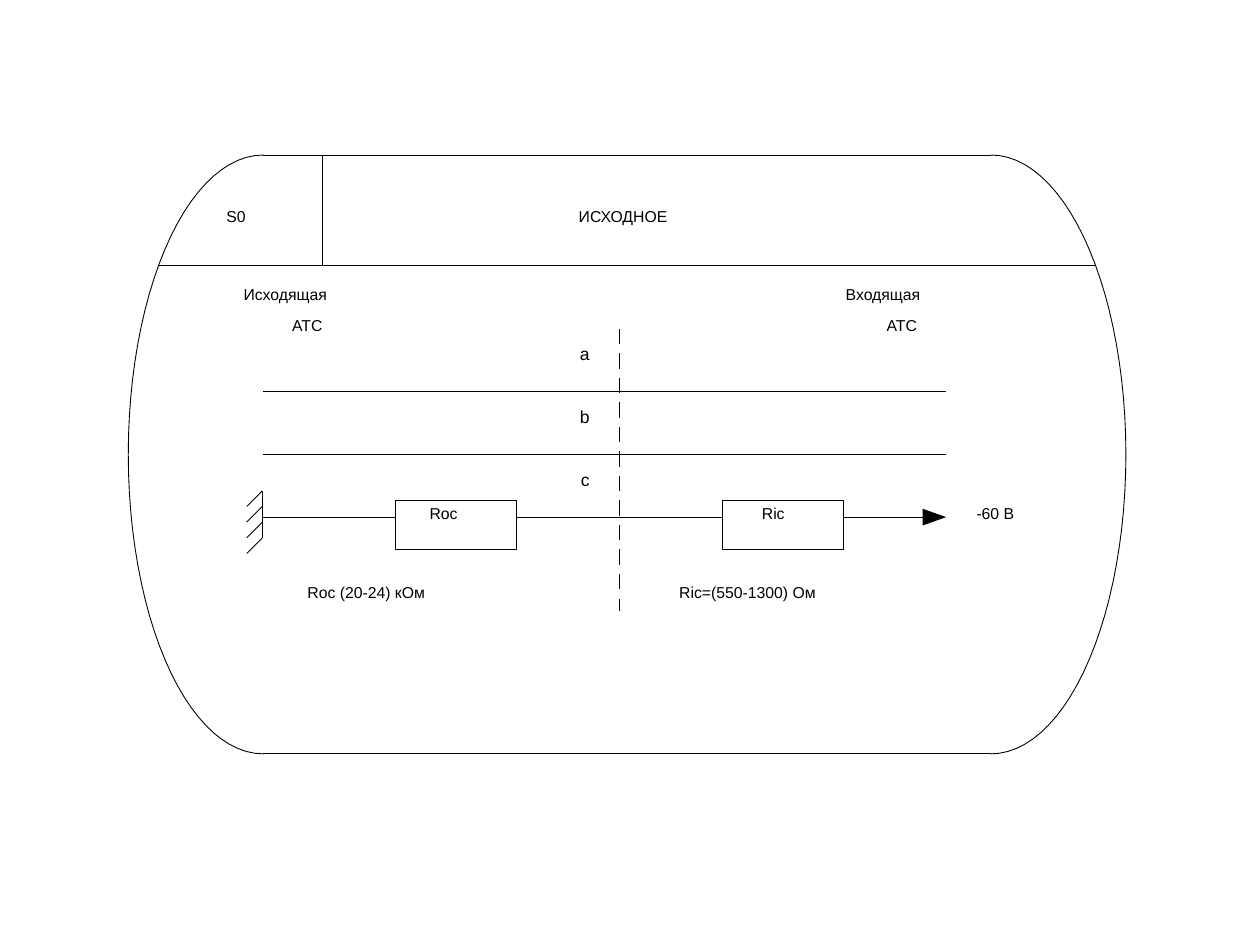
from math import cos, pi, sin

from lxml.etree import SubElement
from pptx import Presentation
from pptx.dml.color import RGBColor
from pptx.enum.shapes import MSO_CONNECTOR, MSO_SHAPE
from pptx.enum.text import MSO_AUTO_SIZE
from pptx.oxml.ns import qn
from pptx.util import Pt

BLACK = RGBColor(0, 0, 0)
WHITE = RGBColor(255, 255, 255)
FONT = "Arial"
LINE_WIDTH = 0.5

# text, left, top, width, font size
HEADINGS = [
    ("S0", 129.4, 118.1, 13, 9),
    ("ИСХОДНОЕ", 330.7, 118.1, 54, 9),
    ("Исходящая", 139.2, 162.7, 50, 9),
    ("АТС", 167, 180.4, 20, 9),
    ("Входящая", 483.3, 162.7, 45, 9),
    ("АТС", 506.7, 180.4, 20, 9),
]
WIRE_LABELS = [
    ("а", 331.4, 195.8, 7, 10),
    ("b", 331.4, 231.8, 7, 10),
    ("c", 331.9, 267.8, 7, 10),
]
CIRCUIT_LABELS = [
    ("Roc", 245.5, 288, 19, 9),
    ("Ric", 435.4, 288, 16, 9),
    ("Roc (20-24) кОм", 175.7, 333.1, 71, 9),
    ("Ric=(550-1300) Ом", 388.1, 333.1, 82, 9),
    ("-60 В", 558, 288, 24, 9),
]

# The frame: straight top and bottom, half an ellipse at each side
LEFT_CENTRE, RIGHT_CENTRE, MIDDLE = 150.5, 566.2, 259.7
RADIUS_X, RADIUS_Y = 77.2, 171.1
TOP, BOTTOM = MIDDLE - RADIUS_Y, MIDDLE + RADIUS_Y
ARC_STEPS = 25
HEADER_BOTTOM = 151.9
FRAME_LINES = [
    (LEFT_CENTRE, TOP, RIGHT_CENTRE, TOP),
    (LEFT_CENTRE, BOTTOM, RIGHT_CENTRE, BOTTOM),
    (90.7, HEADER_BOTTOM, 625.8, HEADER_BOTTOM),
    (184.4, HEADER_BOTTOM, 184.4, TOP),
]

WIRE_LEFT, WIRE_RIGHT, ARROW_LEFT = 150.5, 540.7, 527.2
WIRE_A, WIRE_B, WIRE_C = 223.9, 259.8, 295.5
ARROW_HALF = 4.8
RESISTOR_LEFTS, RESISTOR_TOP = (226, 412.7), 286
RESISTOR_WIDTH, RESISTOR_HEIGHT = 69.2, 28

DIVIDER_X, DIVIDER_TOP, DIVIDER_BOTTOM = 354, 188, 349.3
DASH_STEP, DASH_LENGTH, DASH_COUNT = 14, 8.7, 12
GROUND_X, GROUND_TOP, HATCH_STEP, HATCH_SIZE, HATCH_COUNT = 149.8, 280.6, 8.95, 8.8, 4


def add_line(page, x1, y1, x2, y2):
    line = page.shapes.add_connector(MSO_CONNECTOR.STRAIGHT, Pt(x1), Pt(y1), Pt(x2), Pt(y2))
    line.line.color.rgb = BLACK
    line.line.width = Pt(LINE_WIDTH)
    SubElement(line._element.spPr, qn("a:effectLst"))


def add_outline(page, points, close=False):
    start, *rest = [(Pt(x), Pt(y)) for x, y in points]
    builder = page.shapes.build_freeform(*start, scale=1.0)
    builder.add_line_segments(rest, close=close)
    outline = builder.convert_to_shape()
    outline.shadow.inherit = False
    return outline


def add_quarter_arc(page, centre, side, direction):
    """Draw from the frame's outermost point to its top (-1) or bottom (1)."""
    angles = [pi / 2 * step / ARC_STEPS for step in range(ARC_STEPS + 1)]
    arc = add_outline(page, [(centre + side * RADIUS_X * cos(angle),
                              MIDDLE + direction * RADIUS_Y * sin(angle))
                             for angle in angles])
    arc.fill.background()
    arc.line.color.rgb = BLACK
    arc.line.width = Pt(LINE_WIDTH)


def add_label(page, text, left, top, width, size):
    box = page.shapes.add_textbox(Pt(left), Pt(top), Pt(width), Pt(size * 1.2))
    frame = box.text_frame
    frame.margin_left = frame.margin_right = frame.margin_top = frame.margin_bottom = 0
    frame.word_wrap = True
    frame.auto_size = MSO_AUTO_SIZE.SHAPE_TO_FIT_TEXT
    para = frame.paragraphs[0]
    para.text = text
    para.font.name = FONT
    para.font.size = Pt(size)
    para.font.color.rgb = BLACK


def add_resistor(page, left):
    resistor = page.shapes.add_shape(MSO_SHAPE.RECTANGLE, Pt(left), Pt(RESISTOR_TOP),
                                     Pt(RESISTOR_WIDTH), Pt(RESISTOR_HEIGHT))
    resistor.shadow.inherit = False
    resistor.fill.solid()
    resistor.fill.fore_color.rgb = WHITE
    resistor.line.color.rgb = BLACK
    resistor.line.width = Pt(LINE_WIDTH)


def add_arrow_tip(page):
    tip = add_outline(page, [(ARROW_LEFT, WIRE_C - ARROW_HALF), (WIRE_RIGHT, WIRE_C),
                             (ARROW_LEFT, WIRE_C + ARROW_HALF)], close=True)
    tip.fill.solid()
    tip.fill.fore_color.rgb = BLACK
    tip.line.fill.background()


def add_ground(page):
    add_line(page, GROUND_X, GROUND_TOP + 3 * HATCH_STEP, GROUND_X, GROUND_TOP)
    for index in range(HATCH_COUNT):
        y = GROUND_TOP + index * HATCH_STEP
        add_line(page, GROUND_X, y, GROUND_X - HATCH_SIZE, y + HATCH_SIZE)


def main():
    deck = Presentation()
    deck.slide_width, deck.slide_height = Pt(720), Pt(540)
    page = deck.slides.add_slide(deck.slide_layouts[6])

    for centre, side in ((LEFT_CENTRE, -1), (RIGHT_CENTRE, 1)):
        for direction in (-1, 1):
            add_quarter_arc(page, centre, side, direction)
    for ends in FRAME_LINES:
        add_line(page, *ends)
    for label in HEADINGS:
        add_label(page, *label)

    for index in range(DASH_COUNT):
        y = DIVIDER_TOP + index * DASH_STEP
        add_line(page, DIVIDER_X, y, DIVIDER_X, min(y + DASH_LENGTH, DIVIDER_BOTTOM))
    for y, right in ((WIRE_A, WIRE_RIGHT), (WIRE_B, WIRE_RIGHT), (WIRE_C, ARROW_LEFT)):
        add_line(page, WIRE_LEFT, y, right, y)
    add_arrow_tip(page)
    for left in RESISTOR_LEFTS:
        add_resistor(page, left)
    add_ground(page)
    for label in WIRE_LABELS + CIRCUIT_LABELS:
        add_label(page, *label)

    deck.save("out.pptx")


if __name__ == "__main__":
    main()
